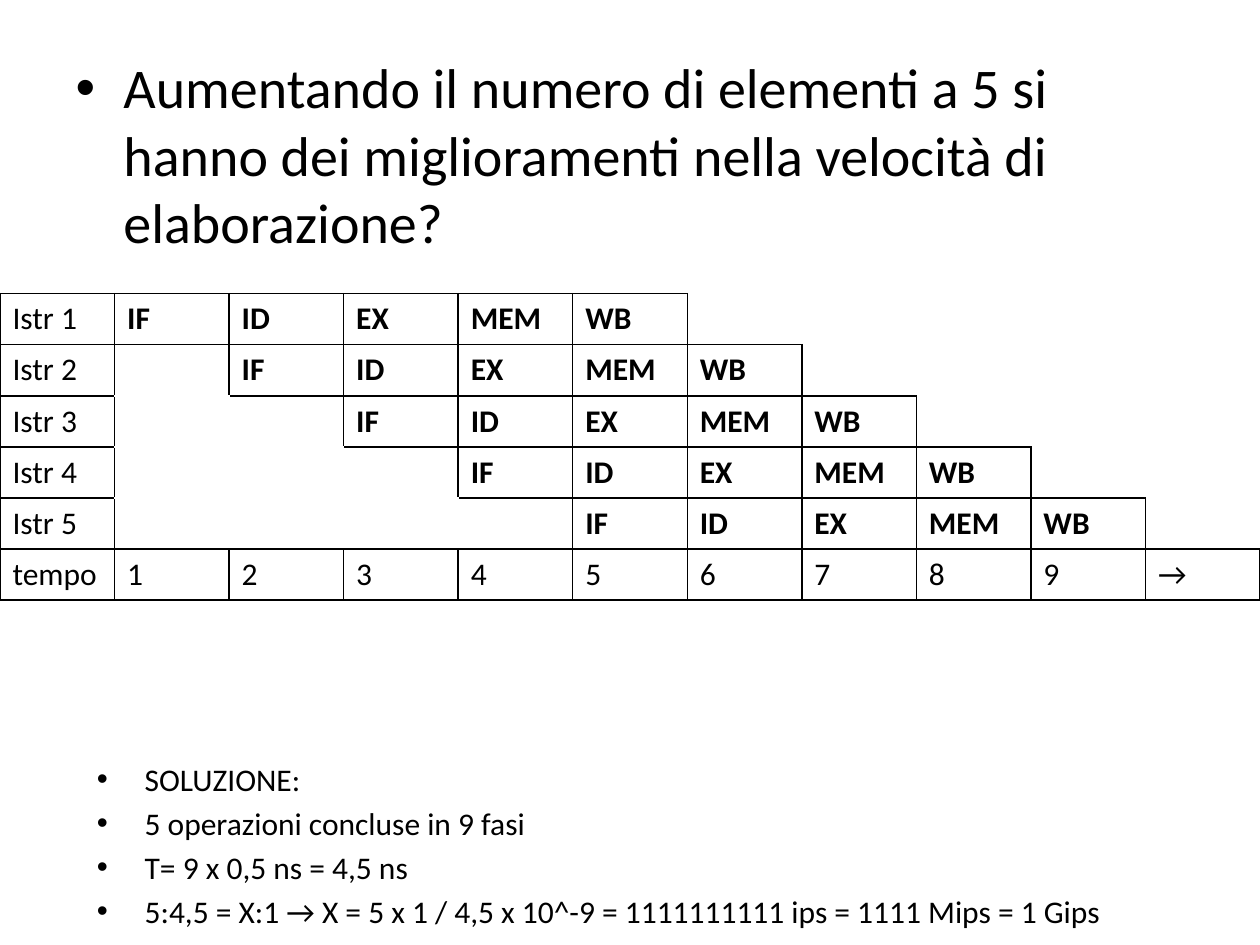
"""Build the pipeline timing slide with its question, table and solution."""
from lxml.etree import SubElement as Sub
from pptx import Presentation
from pptx.dml.color import RGBColor as Rgb
from pptx.oxml.ns import qn
from pptx.util import Inches, Pt

FONT = "Calibri"
COLORS = {"ink": "000000", "paper": "FFFFFF"}
STAGES = ["IF", "ID", "EX", "MEM", "WB"]
COUNT = 5
COLS = COUNT + len(STAGES) + 1
SIDES = {"lnL": (0, -1), "lnR": (0, 1), "lnT": (-1, 0), "lnB": (1, 0)}
ASK = ("Aumentando il numero di elementi a 5 si hanno dei "
       "miglioramenti nella velocità di elaborazione?")
SOLVE = [
    "SOLUZIONE:",
    "5 operazioni concluse in 9 fasi",
    "T= 9 x 0,5 ns = 4,5 ns",
    "5:4,5 = X:1 → X = 5 x 1 / 4,5 x 10^-9 = 1111111111 ips = 1111 Mips = 1 Gips",
]


def style(para, size, bold=False):
    """Set the font of a whole paragraph."""
    font = para.font
    font.name, font.size, font.bold = FONT, Pt(size), bold
    font.color.rgb = Rgb.from_string(COLORS["ink"])


def bullet(para, size):
    """Give a paragraph a hanging bullet and a small gap above."""
    style(para, size)
    para.space_before = Pt(size * 0.2)
    props = para._p.get_or_add_pPr()
    props.set("marL", str(Inches(0.38)))
    props.set("indent", str(-Inches(0.38)))
    mark = props.makeelement(qn("a:buChar"), {"char": "•"})
    face = props.makeelement(qn("a:buFont"), {"typeface": "Arial"})
    spot = props.index(props.find(qn("a:spcBef"))) + 1
    props[spot:spot] = [face, mark]


def write(frame, lines, size):
    """Fill a text frame with a bulleted list."""
    frame.word_wrap = True
    for num, line in enumerate(lines):
        para = frame.add_paragraph() if num else frame.paragraphs[0]
        para.text = line
        bullet(para, size)


def place(shape, left, top, width, height):
    """Move and size a shape, in inches."""
    shape.left, shape.top = Inches(left), Inches(top)
    shape.width, shape.height = Inches(width), Inches(height)


def edge(cell, side, color):
    """Draw one border of a cell."""
    line = Sub(cell._tc.get_or_add_tcPr(), qn("a:" + side), w=str(Pt(1)))
    fill = Sub(line, qn("a:solidFill"))
    Sub(fill, qn("a:srgbClr"), val=color)


def plan():
    """Return the table text, each instruction one step later than the last."""
    rows = []
    for step in range(COUNT):
        row = [f"Istr {step + 1}"] + [""] * step + STAGES
        rows.append(row + [""] * (COLS - len(row)))
    return rows + [["tempo"] + [str(n) for n in range(1, COLS - 1)] + ["→"]]


def add_grid(slide):
    """Add the table, with dark borders only around cells that hold text."""
    rows = plan()
    used = {(r, c) for r, row in enumerate(rows) for c, text in enumerate(row) if text}
    table = slide.shapes.add_table(
        len(rows), COLS, 0, Inches(2.33), Inches(10), Inches(2.43)).table
    table.first_row = table.horz_banding = False
    for r, row in enumerate(rows):
        for c, text in enumerate(row):
            cell = table.cell(r, c)
            for side, (down, right) in SIDES.items():
                dark = used & {(r, c), (r + down, c + right)}
                edge(cell, side, COLORS["ink" if dark else "paper"])
            cell.fill.solid()
            cell.fill.fore_color.rgb = Rgb.from_string(COLORS["paper"])
            cell.text = text
            style(cell.text_frame.paragraphs[0], 18, text in STAGES)


def main():
    """Build and save the slide."""
    deck = Presentation()
    deck.slide_width, deck.slide_height = Inches(10), Inches(7.5)
    slide = deck.slides.add_slide(deck.slide_layouts[1])
    title = slide.shapes.title._element
    title.getparent().remove(title)
    body = slide.placeholders[1]
    place(body, 0.5, 0.37, 9, 4.95)
    write(body.text_frame, [ASK], 32)
    add_grid(slide)
    box = slide.shapes.add_textbox(0, 0, 0, 0)
    place(box, 0.67, 5.98, 9, 2.48)
    write(box.text_frame, SOLVE, 18)
    deck.save("out.pptx")


if __name__ == "__main__":
    main()
